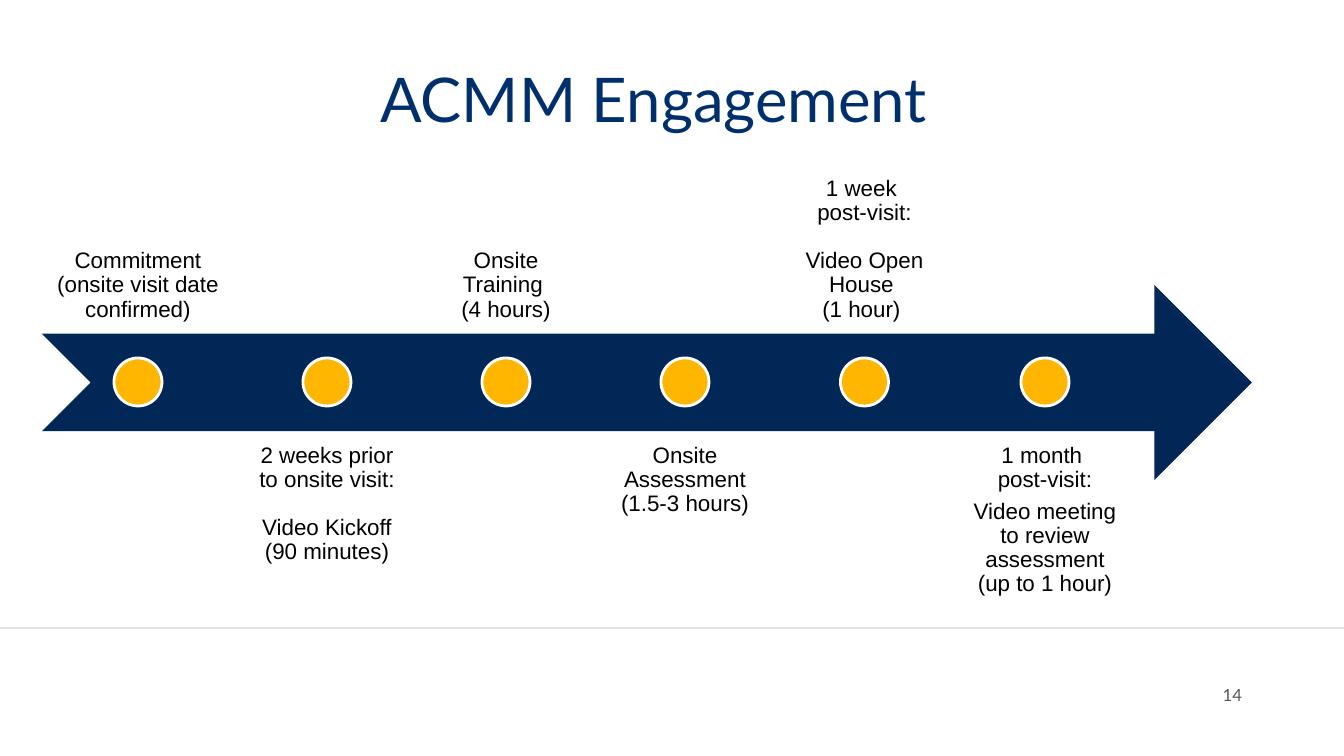
import dataclasses

import pptx
import pptx.dml.color
import pptx.enum.shapes
import pptx.enum.text
import pptx.oxml
import pptx.util

PX = 914400 / 100.8
COLORS = {
    "title": "002F6D",
    "arrow": "002755",
    "dot": "FFB600",
    "white": "FFFFFF",
    "text": "000000",
    "rule": "E3E5E5",
    "number": "53575A",
}
ALIGN = pptx.enum.text.PP_ALIGN
ANCHOR = pptx.enum.text.MSO_ANCHOR
SHAPE = pptx.enum.shapes.MSO_SHAPE

LABEL_H = 195
ABOVE_Y, BELOW_Y = 139, 432
DOT, DOT_Y = 48, 358


@dataclasses.dataclass(frozen=True)
class Milestone:
    left: int
    width: int
    above: bool
    paragraphs: tuple[str, ...]
    gap: float = 0  # points between paragraphs


MILESTONES = [
    Milestone(42, 192, True, ("Commitment (onsite visit date confirmed)",)),
    Milestone(242, 170, False,
              ("2 weeks prior to onsite visit:", "Video Kickoff (90 minutes)"), 17),
    Milestone(421, 170, True, ("Onsite Training \n(4 hours)",)),
    Milestone(600, 170, False, ("Onsite Assessment (1.5-3 hours)",)),
    Milestone(778, 173, True,
              ("1 week \npost-visit:", "Video Open House \n(1 hour) "), 17),
    Milestone(960, 170, False,
              ("1 month \npost-visit:",
               "Video meeting to review assessment (up to 1 hour)"), 5.6),
]


def px(n: float) -> int:
    return round(n * PX)


def color(name: str) -> pptx.dml.color.RGBColor:
    return pptx.dml.color.RGBColor.from_string(COLORS[name])


def box(x: float, y: float, w: float, h: float) -> tuple[int, ...]:
    return px(x), px(y), px(w), px(h)


def add_text(p, text: str, font: str, size: int, fill: str) -> None:
    for i, line in enumerate(text.split("\n")):
        if i:
            p.add_line_break()
        r = p.add_run()
        r.text = line
        r.font.name = font
        r.font.size = pptx.util.Pt(size)
        r.font.color.rgb = color(fill)


def add_shape(s, kind, bounds: tuple[int, ...], fill: str, line: str = ""):
    sp = s.shapes.add_shape(kind, *bounds)
    sp.shadow.inherit = False
    sp.fill.solid()
    sp.fill.fore_color.rgb = color(fill)
    if line:
        sp.line.color.rgb = color(line)
        sp.line.width = pptx.util.Pt(2)
    else:
        sp.line.fill.background()
    return sp


def add_milestone(s, m: Milestone) -> None:
    y = ABOVE_Y if m.above else BELOW_Y
    tf = s.shapes.add_textbox(*box(m.left, y, m.width, LABEL_H)).text_frame
    tf.word_wrap = True
    tf.vertical_anchor = ANCHOR.BOTTOM if m.above else ANCHOR.TOP
    tf.margin_left = tf.margin_right = tf.margin_top = tf.margin_bottom = px(12)
    for i, text in enumerate(m.paragraphs):
        p = tf.add_paragraph() if i else tf.paragraphs[0]
        p.alignment = ALIGN.CENTER
        p.line_spacing = 0.9
        if i:
            p.space_before = pptx.util.Pt(m.gap)
        add_text(p, text, "Arial", 16, "text")
    dot_x = m.left + (m.width - DOT) / 2
    add_shape(s, SHAPE.OVAL, box(dot_x, DOT_Y, DOT, DOT), "dot", "white")


def main() -> None:
    prs = pptx.Presentation()
    prs.slide_width, prs.slide_height = px(1344), px(756)
    s = prs.slides.add_slide(prs.slide_layouts[5])

    # Footer rule
    rule = s.shapes.add_connector(pptx.enum.shapes.MSO_CONNECTOR.STRAIGHT,
                                  *box(0, 628, 1344, 628))
    rule.line.color.rgb = color("rule")
    rule.line.width = pptx.util.Pt(1)
    rule._element.spPr.append(
        pptx.oxml.parse_xml('<a:effectLst xmlns:a="http://schemas.openxmlformats.org/'
                            'drawingml/2006/main"/>'))

    # Title
    title = s.shapes.title
    title.left, title.top, title.width, title.height = box(370, 30, 1159, 146)
    tf = title.text_frame
    tf.word_wrap = True
    tf.auto_size = pptx.enum.text.MSO_AUTO_SIZE.NONE
    tf.vertical_anchor = ANCHOR.MIDDLE
    p = tf.paragraphs[0]
    p.alignment = ALIGN.LEFT
    p.line_spacing = 0.9
    add_text(p, "ACMM Engagement", "Lato", 44, "title")

    # Timeline
    add_shape(s, SHAPE.NOTCHED_RIGHT_ARROW, box(42, 285, 1210, 195), "arrow")
    for m in MILESTONES:
        add_milestone(s, m)

    # Slide number
    tf = s.shapes.add_textbox(*box(950, 675, 302, 40)).text_frame
    tf.word_wrap = True
    tf.vertical_anchor = ANCHOR.MIDDLE
    p = tf.paragraphs[0]
    p.alignment = ALIGN.RIGHT
    add_text(p, "14", "Lato", 12, "number")

    prs.save("out.pptx")


if __name__ == "__main__":
    main()
